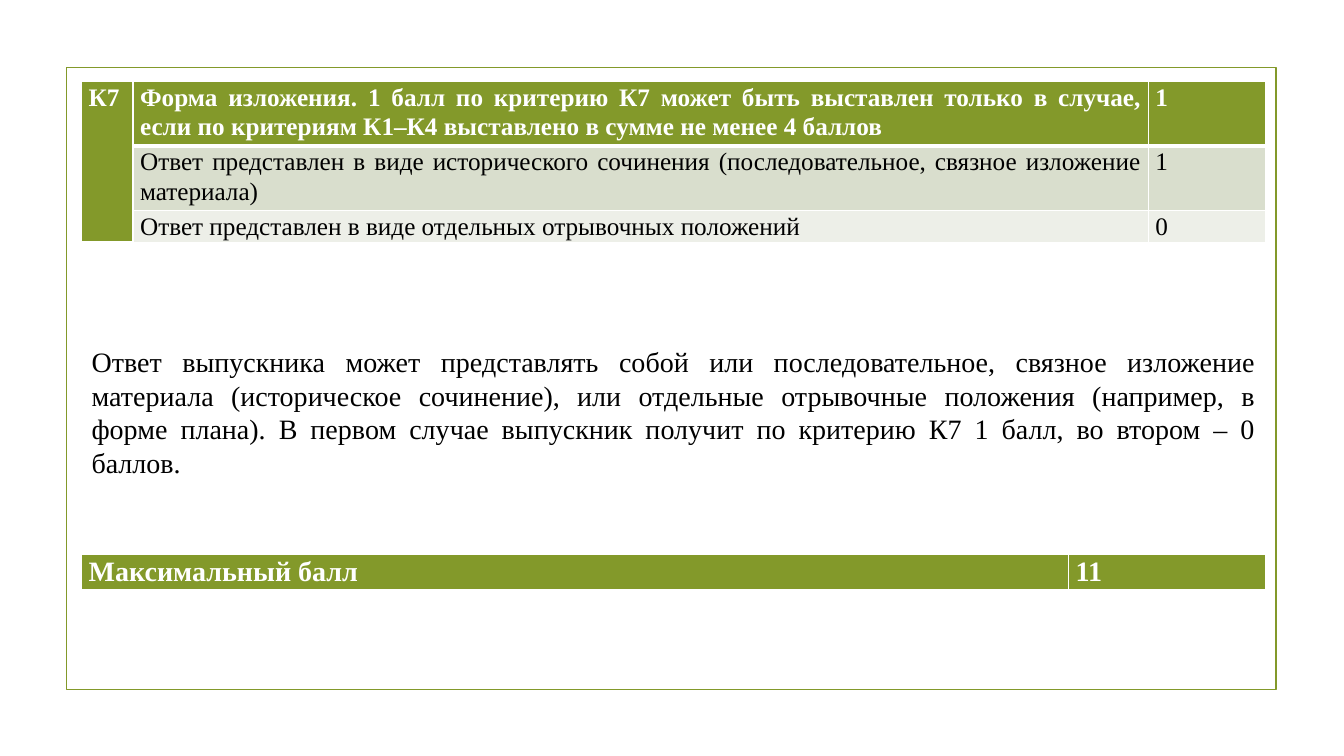
from lxml.etree import SubElement
from pptx import Presentation
from pptx.dml.color import RGBColor
from pptx.enum.shapes import MSO_SHAPE as Shape
from pptx.enum.text import MSO_AUTO_SIZE as Fit, PP_ALIGN as Align
from pptx.oxml.ns import qn
from pptx.util import Inches, Pt

GREEN = RGBColor(0x83, 0x99, 0x2A)
SAGE = RGBColor(0xD9, 0xDE, 0xCD)
PALE = RGBColor(0xED, 0xEF, 0xE8)
WHITE = RGBColor(0xFF, 0xFF, 0xFF)
BLACK = RGBColor(0, 0, 0)
FONT = "Times New Roman"
LEFT, WIDTH = 0.81, 11.74

HEAD = ("Форма изложения. 1 балл по критерию К7 может быть выставлен только в случае, "
        "если по критериям К1–К4 выставлено в сумме не менее 4 баллов")
ESSAY = ("Ответ представлен в виде исторического сочинения "
         "(последовательное, связное изложение материала)")
PARTS = "Ответ представлен в виде отдельных отрывочных положений"
NOTE = ("Ответ выпускника может представлять собой или последовательное, связное изложение "
        "материала (историческое сочинение), или отдельные отрывочные положения (например, "
        "в форме плана). В первом случае выпускник получит по критерию К7 1 балл, "
        "во втором – 0 баллов.")


def write(frame, text, size=18, color=BLACK, bold=False, space=None):
    frame.word_wrap = True
    para = frame.paragraphs[0]
    para.alignment = Align.JUSTIFY
    para.line_spacing = space
    run = para.add_run()
    run.text = text
    font = run.font
    font.name, font.size, font.bold = FONT, Pt(size), bold
    font.color.rgb = color


def edge(cell, base):
    """Draw white cell borders, with the given width at the bottom."""
    props = cell._tc.get_or_add_tcPr()
    for side, width in (("L", 1), ("R", 1), ("T", 1), ("B", base)):
        line = SubElement(props, qn(f"a:ln{side}"), w=str(Pt(width)))
        fill = SubElement(line, qn("a:solidFill"))
        SubElement(fill, qn("a:srgbClr"), val=str(WHITE))


def add_grid(slide, top, cols, rows, texts, fills, size):
    """Add a table whose first row is its bold header."""
    table = slide.shapes.add_table(
        len(rows), len(cols), Inches(LEFT), Inches(top),
        Inches(WIDTH), Inches(sum(rows))).table
    for col, width in zip(table.columns, cols):
        col.width = Inches(width)
    for i, (row, high) in enumerate(zip(table.rows, rows)):
        row.height = Inches(high)
        head = i == 0
        for cell, text in zip(row.cells, texts[i]):
            cell.margin_left = cell.margin_right = Inches(0.07)
            cell.margin_top = cell.margin_bottom = 0
            edge(cell, 3 if head else 1)
            cell.fill.solid()
            cell.fill.fore_color.rgb = fills[i]
            if text:
                write(cell.text_frame, text, size=size, bold=head,
                      color=WHITE if head else BLACK, space=1.07)
    return table


def add_frame(slide):
    box = slide.shapes.add_shape(
        Shape.RECTANGLE, Inches(0.66), Inches(0.67), Inches(12), Inches(6.17))
    box.shadow.inherit = False
    box.fill.background()
    box.line.color.rgb = GREEN
    box.line.width = Pt(1.25)


def add_note(slide, top, text):
    frame = slide.shapes.add_textbox(
        Inches(LEFT), Inches(top), Inches(WIDTH), Inches(1.11)).text_frame
    write(frame, text, size=20)
    frame.auto_size = Fit.SHAPE_TO_FIT_TEXT


def main():
    deck = Presentation()
    deck.slide_width, deck.slide_height = Inches(13.33), Inches(7.5)
    slide = deck.slides.add_slide(deck.slide_layouts[6])
    add_frame(slide)
    marks = add_grid(
        slide, 0.81, [0.51, 10.07, 1.16], [0.64, 0.64, 0.32],
        [["К7", HEAD, "1"], ["", ESSAY, "1"], ["", PARTS, "0"]],
        [GREEN, SAGE, PALE], 18)
    marks.cell(0, 0).merge(marks.cell(2, 0))
    add_note(slide, 3.37, NOTE)
    add_grid(slide, 5.5, [9.79, 1.95], [0.36],
             [["Максимальный балл ", "11"]], [GREEN], 20)
    deck.save("out.pptx")


if __name__ == "__main__":
    main()
